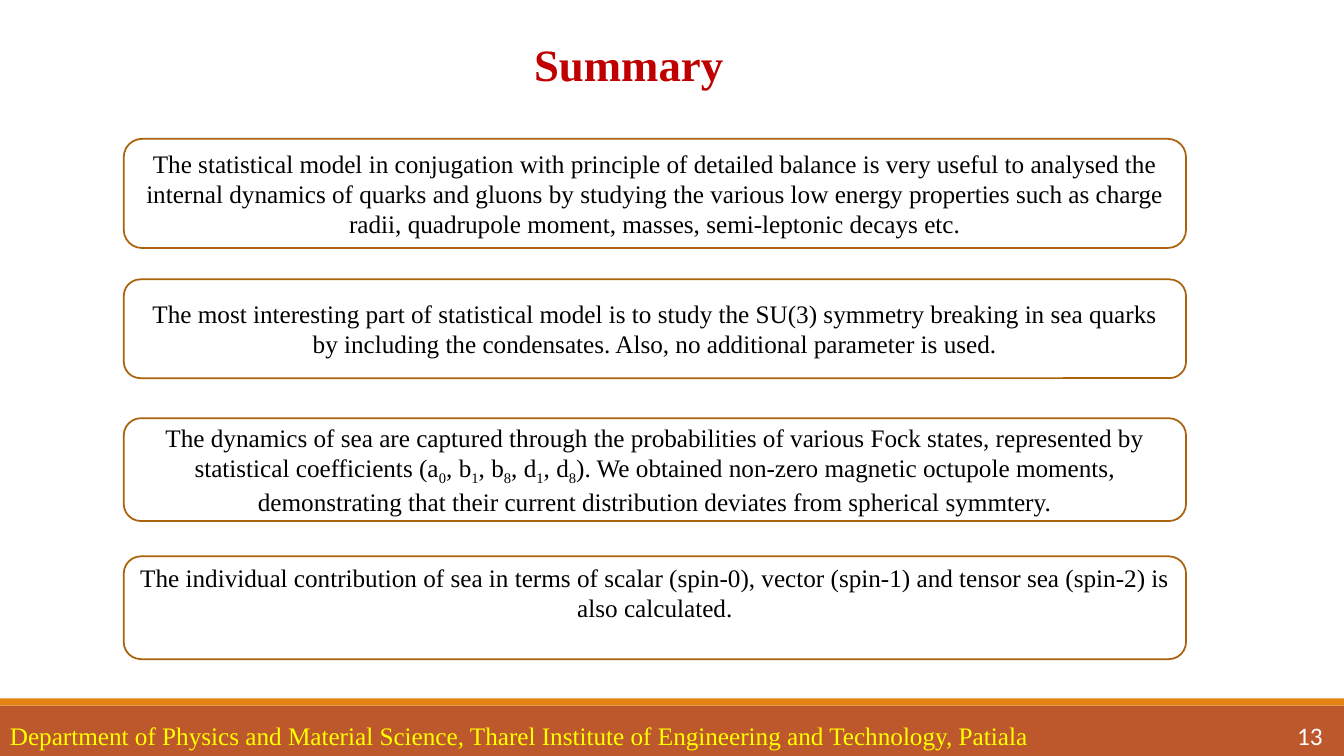
from pptx import Presentation
from pptx.dml.color import RGBColor
from pptx.enum.shapes import MSO_SHAPE
from pptx.enum.text import MSO_ANCHOR, PP_ALIGN
from pptx.util import Cm, Pt

COLORS = {
    "rust": "BD582C",
    "orange": "E48312",
    "outline": "AB620D",
    "white": "FFFFFF",
    "black": "000000",
    "red": "C00000",
    "yellow": "FFFF00",
}
SERIF = "Times New Roman"
PAGE_WIDTH = 33.87
CARD_LEFT, CARD_WIDTH = 3.12, 26.77

CARDS = [
    (3.5, 2.75, 0.13, [
        "The statistical model in conjugation with principle of detailed balance is very useful "
        "to analysed the internal dynamics of quarks and gluons by studying the various low "
        "energy properties such as charge radii, quadrupole moment, masses, semi-leptonic "
        "decays etc."]),
    (7.04, 2.49, 0.13, [
        "The most interesting part of statistical model is to study the SU(3) symmetry breaking "
        "in sea quarks by including the condensates. Also, no additional parameter is used."]),
    (10.54, 2.59, 0.13, [
        "The dynamics of sea are captured through the probabilities of various Fock states, "
        "represented by statistical coefficients (a", "0", ", b", "1", ", b", "8", ", d", "1",
        ", d", "8",
        "). We obtained non-zero magnetic octupole moments, demonstrating that their current "
        "distribution deviates from spherical symmtery."]),
    (14.02, 2.59, 0.89, [
        "The individual contribution of sea in terms of scalar (spin-0), vector (spin-1) and "
        "tensor sea (spin-2) is also calculated."]),
]


class SlideBuilder:
    def __init__(self, page):
        self.page = page

    def color(self, name):
        return RGBColor.from_string(COLORS[name])

    def add_text(self, box, pieces, align, color, **formats):
        para = box.text_frame.paragraphs[0]
        para.alignment = align
        values = {"name": SERIF, "size": Pt(18), **formats}
        for index, piece in enumerate(pieces):
            span = para.add_run()
            span.text = piece
            span.font.color.rgb = self.color(color)
            for key, value in values.items():
                setattr(span.font, key, value)
            if index % 2:
                span.font._element.set("baseline", "-25000")

    def shape(self, kind, left, top, width, height, fill):
        box = self.page.shapes.add_shape(kind, Cm(left), Cm(top), Cm(width), Cm(height))
        box.shadow.inherit = False
        box.fill.solid()
        box.fill.fore_color.rgb = self.color(fill)
        return box

    def band(self, top, height, fill):
        box = self.shape(MSO_SHAPE.RECTANGLE, 0, top, PAGE_WIDTH, height, fill)
        box.line.fill.background()

    def label(self, left, top, width, height, text, color, **formats):
        box = self.page.shapes.add_textbox(Cm(left), Cm(top), Cm(width), Cm(height))
        box.text_frame.word_wrap = True
        self.add_text(box, [text], PP_ALIGN.LEFT, color, **formats)

    def card(self, top, height, bottom_margin, pieces):
        box = self.shape(MSO_SHAPE.ROUNDED_RECTANGLE, CARD_LEFT, top, CARD_WIDTH, height, "white")
        box.line.color.rgb = self.color("outline")
        box.line.width = Pt(1.25)
        frame = {
            "word_wrap": True,
            "vertical_anchor": MSO_ANCHOR.MIDDLE,
            "margin_bottom": Cm(bottom_margin),
        }
        for key, value in frame.items():
            setattr(box.text_frame, key, value)
        self.add_text(box, pieces, PP_ALIGN.CENTER, "black")


def main():
    deck = Presentation()
    deck.slide_width, deck.slide_height = Cm(PAGE_WIDTH), Cm(19.05)
    builder = SlideBuilder(deck.slides.add_slide(deck.slide_layouts[6]))

    builder.band(17.78, 1.27, "rust")
    builder.band(17.6, 0.18, "orange")
    builder.label(13.21, 0.81, 6.17, 1.63, "Summary", "red", size=Pt(32), bold=True)
    builder.label(0, 18.03, 27.1, 1.02,
                  "Department of Physics and Material Science, Tharel Institute of "
                  "Engineering and Technology, Patiala", "yellow")
    builder.label(32.44, 18.03, 1.19, 1.02, "13", "white", name="Calibri")
    for card in CARDS:
        builder.card(*card)

    deck.save("out.pptx")


if __name__ == "__main__":
    main()
